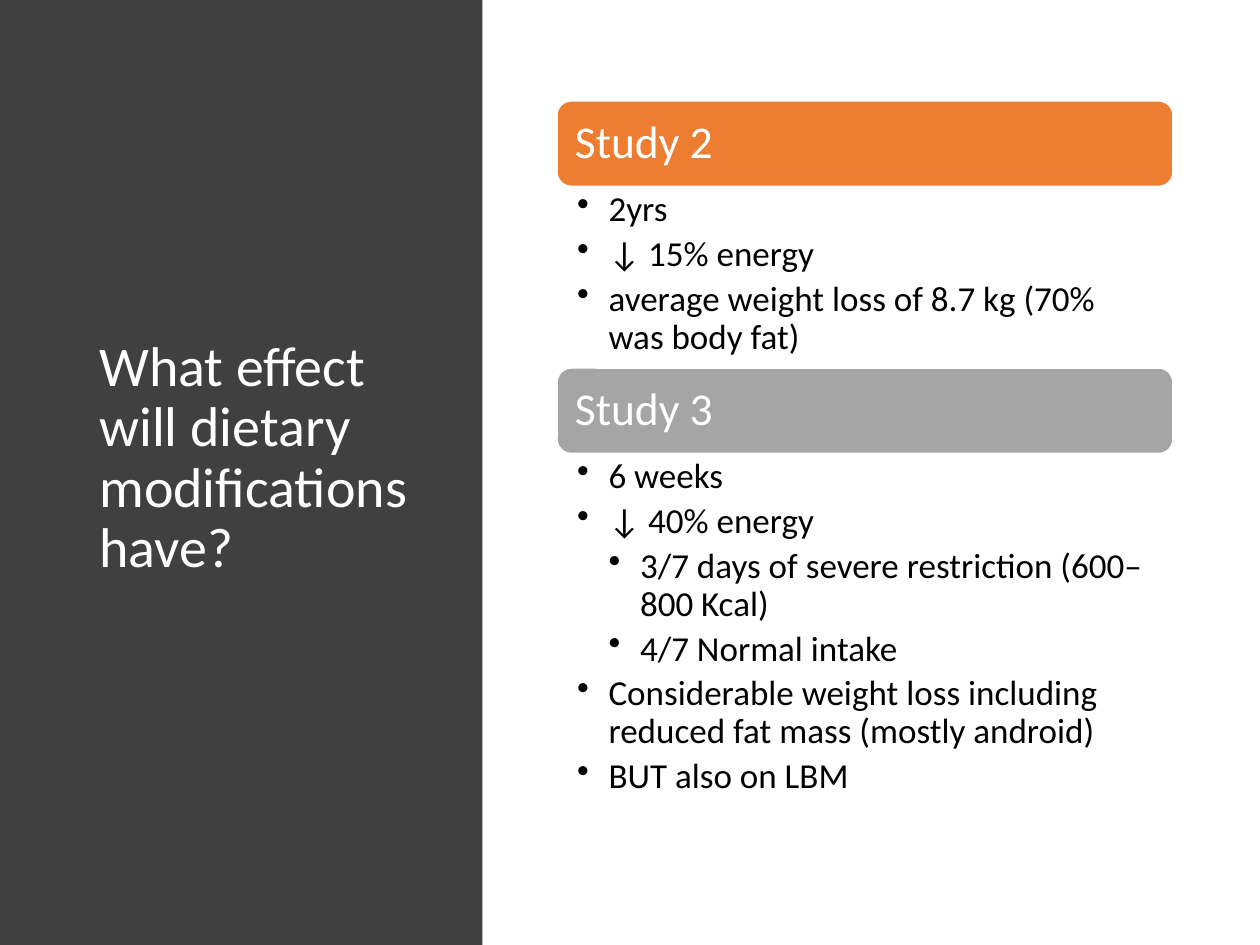
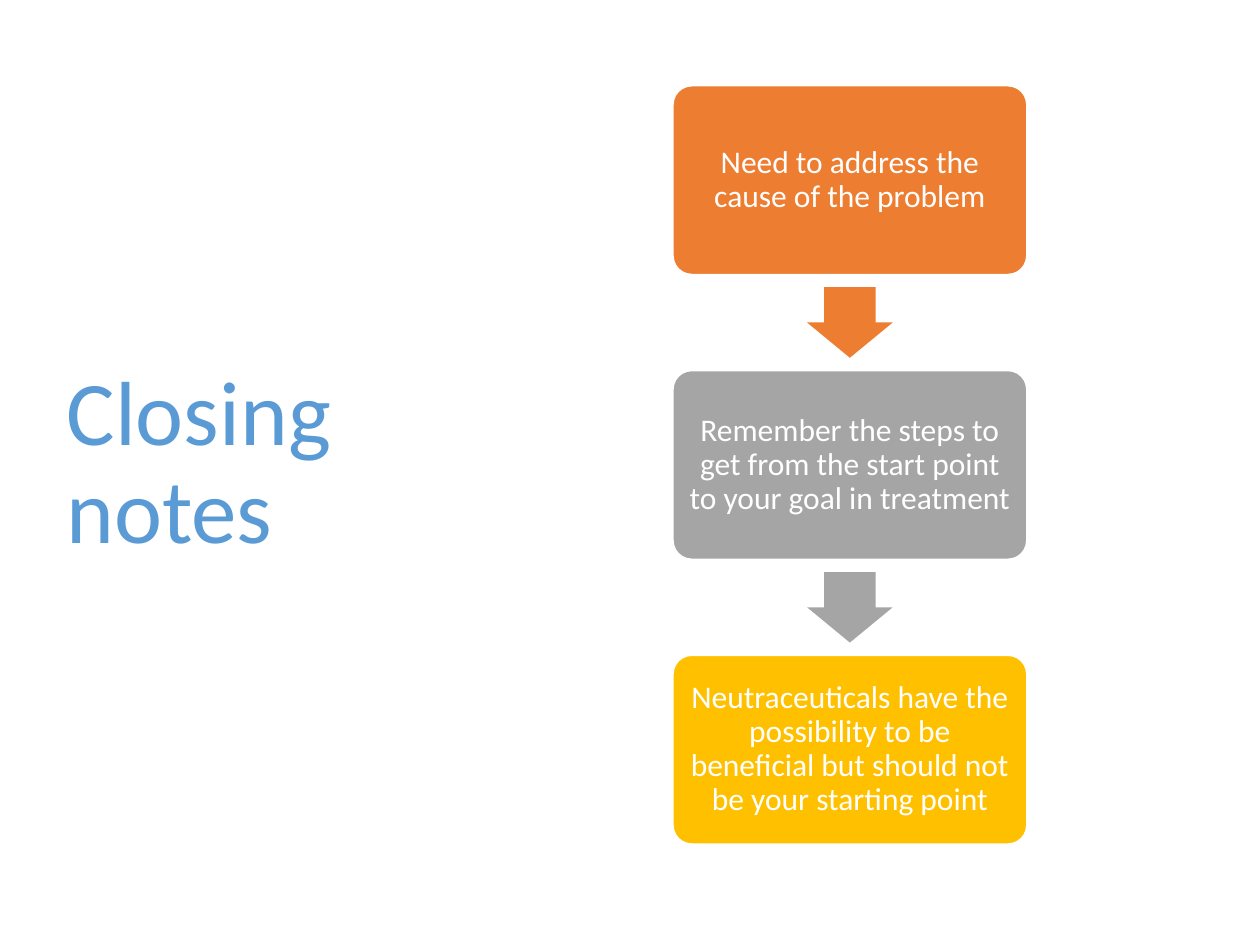
from lxml.etree import SubElement
from pptx import Presentation
from pptx.dml.color import RGBColor
from pptx.enum.shapes import MSO_SHAPE
from pptx.enum.text import MSO_ANCHOR, PP_ALIGN
from pptx.oxml.ns import qn
from pptx.util import Inches, Pt

WHITE = RGBColor(0xFF, 0xFF, 0xFF)
BLACK = RGBColor(0x00, 0x00, 0x00)
CHARCOAL = RGBColor(0x40, 0x40, 0x40)
ORANGE = RGBColor(0xED, 0x7D, 0x31)
GRAY = RGBColor(0xA5, 0xA5, 0xA5)
GOLD = RGBColor(0xFF, 0xC0, 0x00)
BLUE = RGBColor(0x5B, 0x9B, 0xD5)
FONT = "Calibri"
INDENT = 0.25


def write(frame, lines, size=20, color=WHITE, align=PP_ALIGN.LEFT,
          anchor=MSO_ANCHOR.MIDDLE, insets=(0.1, 0.05, 0.1, 0.05), bullets=False):
    """Fill a text frame with (level, text) lines in one format."""
    frame.word_wrap = True
    frame.vertical_anchor = anchor
    (frame.margin_left, frame.margin_top,
     frame.margin_right, frame.margin_bottom) = map(Inches, insets)
    for index, (level, text) in enumerate(lines):
        paragraph = frame.add_paragraph() if index else frame.paragraphs[0]
        paragraph.alignment = align
        paragraph.line_spacing = 0.9
        if bullets:
            paragraph.level = level
            paragraph.space_after = Pt(size * 0.2)
            properties = paragraph._p.get_or_add_pPr()
            properties.set("marL", str(Inches(INDENT * level)))
            properties.set("indent", str(-Inches(INDENT)))
            SubElement(properties, qn("a:buChar"), char="•")
        run = paragraph.add_run()
        run.text = text
        run.font.name = FONT
        run.font.size = Pt(size)
        run.font.color.rgb = color


class Deck:
    """Holds the shared style and the slide being built."""

    def __init__(self):
        self.presentation = Presentation()
        self.presentation.slide_width = Inches(10)
        self.presentation.slide_height = Inches(7.5)
        self.slide = None

    def new_slide(self):
        self.slide = self.presentation.slides.add_slide(self.presentation.slide_layouts[6])

    def block(self, kind, place, fill, outline=None, adjustments=()):
        block = self.slide.shapes.add_shape(kind, *map(Inches, place))
        block.shadow.inherit = False
        block.fill.solid()
        block.fill.fore_color.rgb = fill
        if outline is None:
            block.line.fill.background()
        else:
            block.line.color.rgb = outline
            block.line.width = Pt(1)
        for index, value in enumerate(adjustments):
            block.adjustments[index] = value
        return block

    def card(self, place, text, fill, corner, inset, **style):
        card = self.block(MSO_SHAPE.ROUNDED_RECTANGLE, place, fill, WHITE, [corner])
        write(card.text_frame, [(0, text)], insets=(inset,) * 4, **style)

    def text(self, place, lines, **style):
        box = self.slide.shapes.add_textbox(*map(Inches, place))
        write(box.text_frame, lines, **style)

    def title(self, place, text, **style):
        self.text(place, [(0, text)], **style)


def add_studies(deck):
    deck.new_slide()
    deck.block(MSO_SHAPE.RECTANGLE, (0, 0, 3.83, 7.5), CHARCOAL)
    deck.title((0.69, 0.68, 2.75, 5.92), "What effect will dietary modifications have?", size=32)

    studies = [
        ("Study 2", ORANGE, 1.44, [
            (1, "2yrs"),
            (1, "↓ 15% energy"),
            (1, "average weight loss of 8.7 kg (70% was body fat)"),
        ]),
        ("Study 3", GRAY, 2.88, [
            (1, "6 weeks"),
            (1, "↓ 40% energy"),
            (2, "3/7 days of severe restriction (600–800 Kcal)"),
            (2, "4/7 Normal intake"),
            (1, "Considerable weight loss including reduced fat mass (mostly android)"),
            (1, "BUT also on LBM"),
        ]),
    ]
    left, top, width, header_height = 4.42, 0.8, 4.89, 0.68
    for name, color, findings_height, findings in studies:
        deck.card((left, top, width, header_height), name, color,
                  corner=0.1667, inset=0.11, size=26)
        top += header_height
        deck.text((left, top, width, findings_height), findings, color=BLACK,
                  anchor=MSO_ANCHOR.TOP, insets=(0.16, 0.04, 0.2, 0.04), bullets=True)
        top += findings_height


def add_closing_notes(deck):
    deck.new_slide()
    deck.title((0.43, 0.68, 3.12, 6.02), "Closing notes", size=52, color=BLUE)

    notes = [
        ("Need to address the cause of the problem", ORANGE),
        ("Remember the steps to get from the start point to your goal in treatment", GRAY),
        ("Neutraceuticals have the possibility to be beneficial "
         "but should not be your starting point", GOLD),
    ]
    left, width, height, step = 5.34, 2.81, 1.5, 2.26
    arrow_width, arrow_height = 0.68, 0.56
    for index, (note, color) in enumerate(notes):
        top = 0.68 + index * step
        deck.card((left, top, width, height), note, color,
                  corner=0.1, inset=0.07, size=18, align=PP_ALIGN.CENTER)
        if index < len(notes) - 1:
            arrow_left = left + (width - arrow_width) / 2
            arrow_top = top + (height + step - arrow_height) / 2
            deck.block(MSO_SHAPE.DOWN_ARROW,
                       (arrow_left, arrow_top, arrow_width, arrow_height),
                       color, adjustments=(0.6, 0.5))


def main():
    deck = Deck()
    add_studies(deck)
    add_closing_notes(deck)
    deck.presentation.save("out.pptx")


if __name__ == "__main__":
    main()
